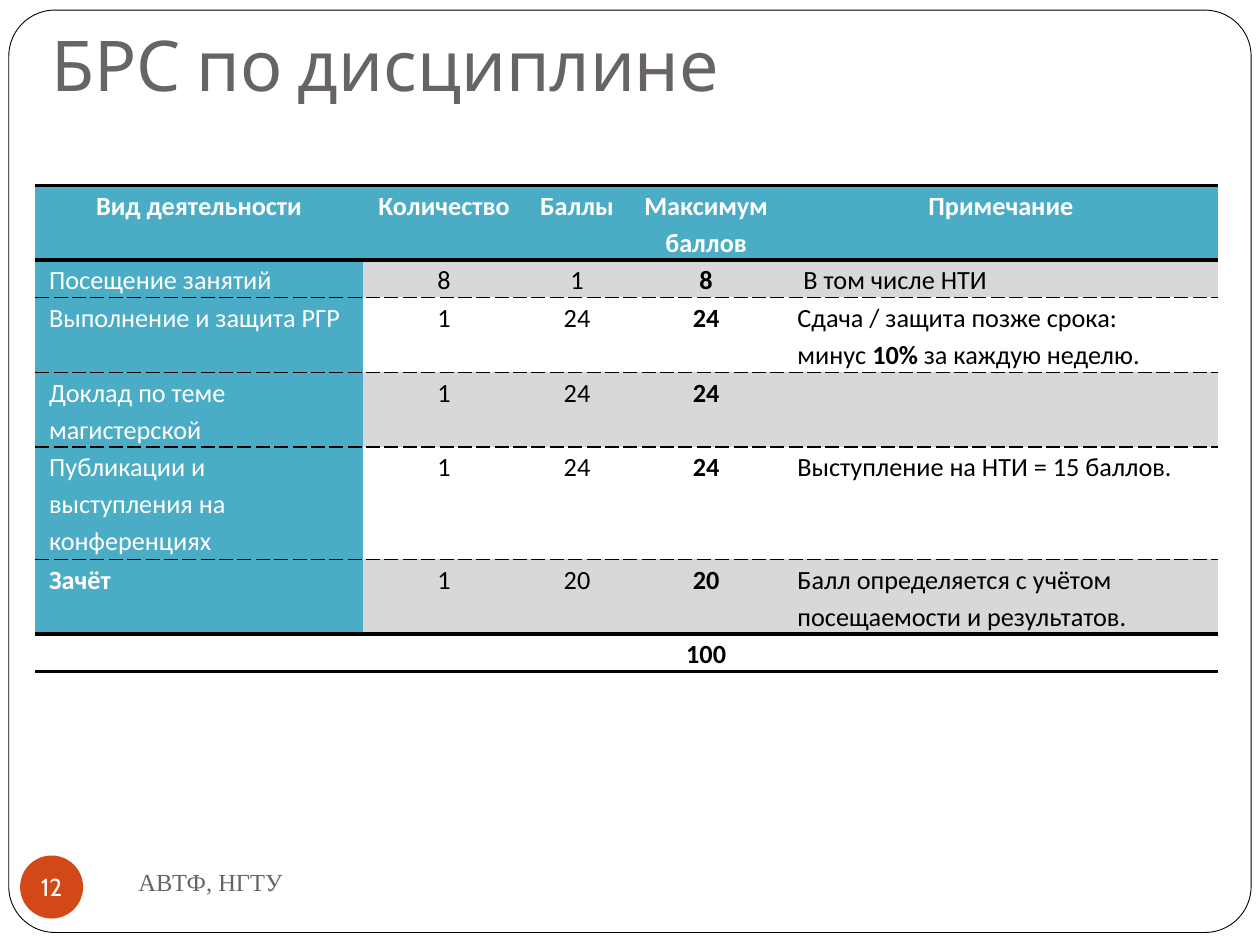
import lxml.etree
import pptx
import pptx.dml.color
import pptx.enum.shapes
import pptx.enum.text
import pptx.oxml.ns
import pptx.util

ALIGN = pptx.enum.text.PP_ALIGN
ANCHOR = pptx.enum.text.MSO_ANCHOR
SHAPE = pptx.enum.shapes.MSO_SHAPE
PLAIN_TABLE = "{2D5ABB26-0587-4C30-8999-92F81FD0307C}"

# Asterisks enclose bold words
HEADER = ["Вид деятельности", "Количество", "Баллы", "Максимум баллов", "Примечание"]
ACTIVITIES = [
    ["Посещение занятий", "8", "1", "8", " В том числе НТИ"],
    ["Выполнение и защита РГР", "1", "24", "24",
     "Сдача / защита позже срока:\nминус *10%* за каждую неделю."],
    ["Доклад по теме магистерской", "1", "24", "24", ""],
    ["Публикации и выступления на конференциях", "1", "24", "24",
     "Выступление на НТИ = 15 баллов."],
    ["*Зачёт*", "1", "20", "20",
     "Балл определяется с учётом посещаемости и результатов."],
]
TOTAL = ["", "", "", "100", ""]
COLUMN_SHARES = [26, 12.9, 8.2, 12.3, 34.5]
LINES_PER_ROW = [2, 1, 2, 2, 3, 2, 1]
LINE_SHARE = 3.96
MAXIMUM_COLUMN = 3


def color(hex_value):
    return pptx.dml.color.RGBColor.from_string(hex_value)


def add_xml(parent, tag, **attributes):
    return lxml.etree.SubElement(parent, pptx.oxml.ns.qn(tag), attributes)


class SlideBuilder:
    """Holds the style and the slide; lengths are percent of the slide's size."""

    heading_font, table_font, footer_font = "Cabin", "Calibri", "Times New Roman"
    black, white, muted = "000000", "FFFFFF", "696464"
    accent, header_fill, band_fill = "D34817", "4BACC6", "D8D8D8"
    table_size = 15

    def __init__(self, presentation):
        self.width, self.height = presentation.slide_width, presentation.slide_height
        self.slide = presentation.slides.add_slide(presentation.slide_layouts[6])

    def across(self, share):
        return round(self.width * share / 100)

    def down(self, share):
        return round(self.height * share / 100)

    def box(self, left, top, width, height):
        return self.across(left), self.down(top), self.across(width), self.down(height)

    def style(self, run, font, size, hex_value, bold=False):
        run.font.name, run.font.size, run.font.bold = font, pptx.util.Pt(size), bold
        run.font.color.rgb = color(hex_value)

    def shape(self, kind, area, fill, line=None):
        shape = self.slide.shapes.add_shape(kind, *self.box(*area))
        shape.shadow.inherit = False
        shape.fill.solid()
        shape.fill.fore_color.rgb = color(fill)
        if line:
            shape.line.color.rgb = color(line)
            shape.line.width = pptx.util.Pt(0.5)
        else:
            shape.line.fill.background()
        return shape

    def set_text(self, frame, text, font, size, hex_value, anchor):
        frame.text = text
        frame.vertical_anchor = anchor
        self.style(frame.paragraphs[0].runs[0], font, size, hex_value)

    def frame(self, area):
        outline = self.shape(SHAPE.ROUNDED_RECTANGLE, area, self.white, self.black)
        outline.adjustments[0] = 0.05

    def text(self, area, text, font, size, anchor, bottom_inset=0.05):
        frame = self.slide.shapes.add_textbox(*self.box(*area)).text_frame
        frame.word_wrap = True
        frame.margin_bottom = pptx.util.Inches(bottom_inset)
        self.set_text(frame, text, font, size, self.muted, anchor)

    def badge(self, area, number):
        frame = self.shape(SHAPE.OVAL, area, self.accent).text_frame
        frame.margin_left = frame.margin_right = frame.margin_top = frame.margin_bottom = 0
        frame.word_wrap = False
        self.set_text(frame, number, self.heading_font, 14, self.white, ANCHOR.MIDDLE)
        frame.paragraphs[0].alignment = ALIGN.CENTER

    def border(self, cell, side, solid):
        points = 2.25 if solid else 1
        line = add_xml(cell._tc.get_or_add_tcPr(), side, w=str(pptx.util.Pt(points)))
        add_xml(add_xml(line, "a:solidFill"), "a:srgbClr", val=self.black)
        add_xml(line, "a:prstDash", val="solid" if solid else "dash")

    def fill_cell(self, cell, text, hex_value, bold, centered):
        cell.margin_left = cell.margin_right = pptx.util.Inches(0.11)
        cell.margin_top = cell.margin_bottom = 0
        paragraph = cell.text_frame.paragraphs[0]
        paragraph.line_spacing = 1.15
        paragraph.alignment = ALIGN.CENTER if centered else ALIGN.LEFT
        size = str(self.table_size * 100)
        for part_index, part in enumerate(text.split("*")):
            for line_index, line in enumerate(part.split("\n")):
                if line_index:
                    paragraph.add_line_break()
                    add_xml(paragraph._p[-1], "a:rPr", sz=size)
                if line:
                    run = paragraph.add_run()
                    run.text = line
                    self.style(run, self.table_font, self.table_size, hex_value,
                               bold or part_index % 2 == 1)
        add_xml(paragraph._p, "a:endParaRPr", sz=size)

    def table(self, left, top, rows):
        area = self.box(left, top, sum(COLUMN_SHARES), sum(LINES_PER_ROW) * LINE_SHARE)
        table = self.slide.shapes.add_table(len(rows), len(COLUMN_SHARES), *area).table
        table.first_row = table.horz_banding = False
        table._tbl.tblPr.find(pptx.oxml.ns.qn("a:tableStyleId")).text = PLAIN_TABLE
        for column, share in zip(table.columns, COLUMN_SHARES):
            column.width = self.across(share)
        last = len(rows) - 1
        solid_edges = {0, 1, last, last + 1}
        for r, (values, lines) in enumerate(zip(rows, LINES_PER_ROW)):
            table.rows[r].height = self.down(lines * LINE_SHARE)
            for c, value in enumerate(values):
                cell = table.cell(r, c)
                is_header = r == 0
                on_accent = is_header or (c == 0 and r < last)
                self.fill_cell(cell, value, self.white if on_accent else self.black,
                               is_header or c == MAXIMUM_COLUMN,
                               is_header or 0 < c <= MAXIMUM_COLUMN)
                self.border(cell, "a:lnT", r in solid_edges)
                self.border(cell, "a:lnB", r + 1 in solid_edges)
                if on_accent or r % 2 or r == last:
                    cell.fill.solid()
                    cell.fill.fore_color.rgb = color(
                        self.header_fill if on_accent
                        else self.band_fill if r % 2 else self.white)
                else:
                    cell.fill.background()


def main():
    presentation = pptx.Presentation()
    presentation.slide_width = pptx.util.Inches(10)
    presentation.slide_height = pptx.util.Inches(7.5)
    builder = SlideBuilder(presentation)
    builder.frame((0.7, 1.07, 98.6, 97.6))
    builder.text((3.1, 1.07, 93.8, 11.47), "БРС по дисциплине",
                 builder.heading_font, 40, ANCHOR.BOTTOM, bottom_inset=0.1)
    builder.badge((1.6, 90.53, 5, 6.67), "12")
    builder.text((10, 90, 45.5, 6.67), "АВТФ, НГТУ",
                 builder.footer_font, 14, ANCHOR.MIDDLE)
    builder.table(2.8, 19.6, [HEADER, *ACTIVITIES, TOTAL])
    presentation.save("out.pptx")


if __name__ == "__main__":
    main()
